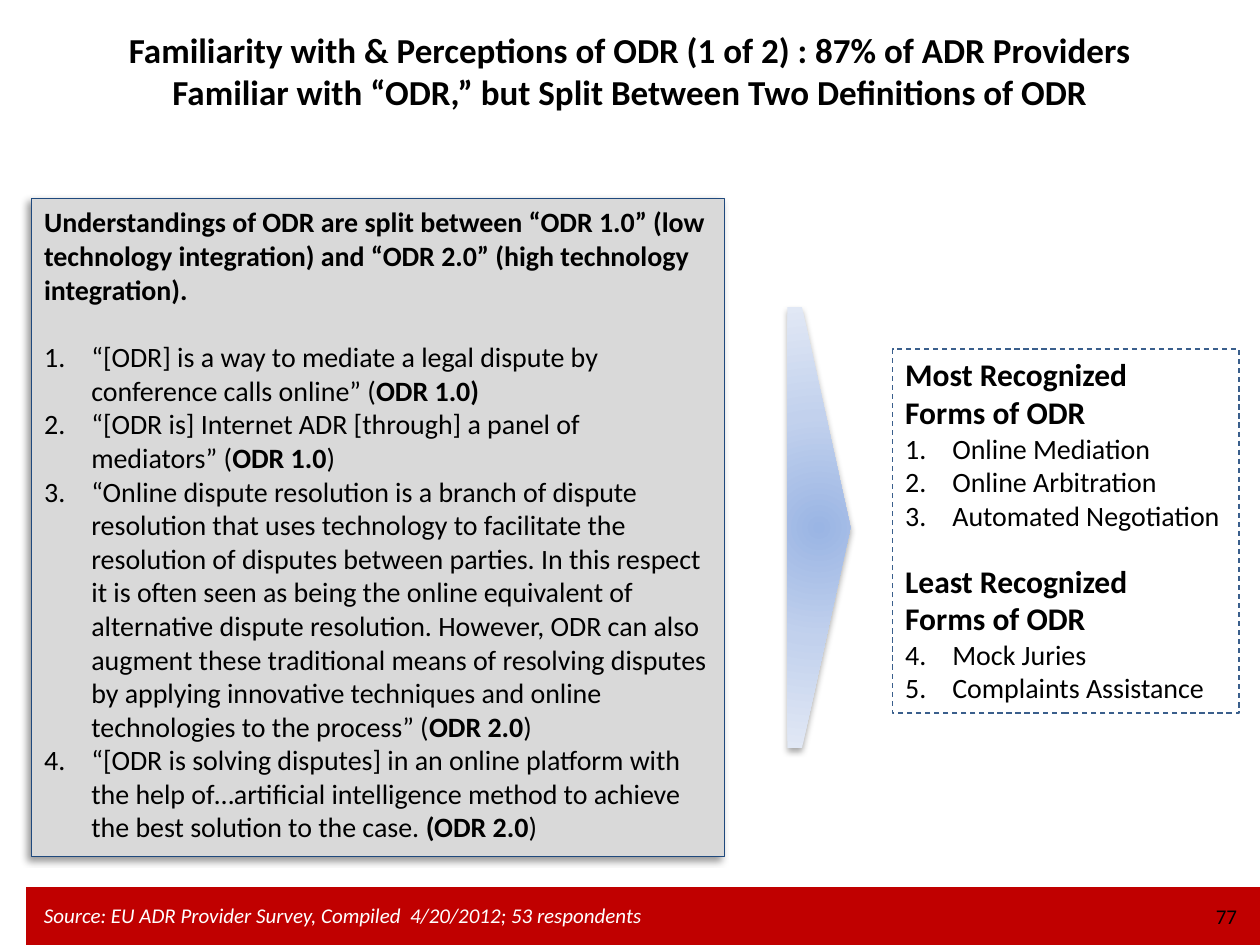
from lxml.etree import SubElement as Sub
from pptx import Presentation
from pptx.dml.color import RGBColor
from pptx.enum.dml import MSO_LINE as Dash
from pptx.enum.shapes import MSO_SHAPE as Kind
from pptx.enum.text import MSO_ANCHOR as Anchor, MSO_AUTO_SIZE as Fit, PP_ALIGN as Align
from pptx.oxml.ns import qn
from pptx.util import Pt

BLACK = RGBColor(0x00, 0x00, 0x00)
WHITE = RGBColor(0xFF, 0xFF, 0xFF)
RED = RGBColor(0xC0, 0x00, 0x00)
GREY = RGBColor(0xD9, 0xD9, 0xD9)
NAVY = RGBColor(0x1F, 0x49, 0x7D)
STEEL = RGBColor(0x3A, 0x5F, 0x8C)
GLOW = [(0, RGBColor(0x9A, 0xB5, 0xE4)),
        (50, RGBColor(0xC2, 0xD1, 0xED)),
        (100, RGBColor(0xE1, 0xE8, 0xF5))]
FONT = "Calibri"
INDENT = 27

TITLE = ("Familiarity with & Perceptions of ODR (1 of 2) : 87% of ADR Providers "
         "Familiar with “ODR,” but Split Between Two Definitions of ODR")
LEAD = ("Understandings of ODR are split between “ODR 1.0” (low technology "
        "integration) and “ODR 2.0” (high technology integration).")
# A bar switches bold on and off
QUOTES = [
    "“[ODR] is a way to mediate a legal dispute by conference calls online” (|ODR 1.0)",
    "“[ODR is] Internet ADR [through] a panel of mediators” (|ODR 1.0|)",
    "“Online dispute resolution is a branch of dispute resolution that uses "
    "technology to facilitate the resolution of disputes between parties. In this "
    "respect it is often seen as being the online equivalent of alternative dispute "
    "resolution. However, ODR can also augment these traditional means of resolving "
    "disputes by applying innovative techniques and online technologies to the "
    "process” (|ODR 2.0|)",
    "“[ODR is solving disputes] in an online platform with the help of…artificial "
    "intelligence method to achieve the best solution to the case. |(ODR 2.0|)",
]
FORMS = [("Most", 1, ["Online Mediation", "Online Arbitration", "Automated Negotiation"]),
         ("Least", 4, ["Mock Juries", "Complaints Assistance"])]


def place(shape, left, top, width, height):
    shape.left, shape.top = Pt(left), Pt(top)
    shape.width, shape.height = Pt(width), Pt(height)
    return shape


def add_run(para, text, size, bold=False, color=BLACK, italic=False):
    run = para.add_run()
    run.text = text
    font = run.font
    font.name, font.size, font.bold, font.italic = FONT, Pt(size), bold, italic
    font.color.rgb = color


def next_para(frame, gap=0):
    """Take the first empty paragraph, or add one, without a bullet yet."""
    first = frame.paragraphs[0]
    para = frame.add_paragraph() if first.runs else first
    para.space_before = Pt(gap)
    return para


def add_head(frame, text, size, gap=0):
    para = next_para(frame, gap)
    props = para._p.get_or_add_pPr()
    props.set("marL", "0")
    props.set("indent", "0")
    Sub(props, qn("a:buNone"))
    add_run(para, text, size, bold=True)


def add_items(frame, items, start=1, gap=0):
    for i, item in enumerate(items):
        para = next_para(frame, 0 if i else gap)
        props = para._p.get_or_add_pPr()
        props.set("marL", str(Pt(INDENT)))
        props.set("indent", str(-Pt(INDENT)))
        Sub(props, qn("a:buFont"), typeface="+mj-lt")
        mark = Sub(props, qn("a:buAutoNum"), type="arabicPeriod")
        if start > 1:
            mark.set("startAt", str(start))
        for j, part in enumerate(item.split("|")):
            add_run(para, part, 16, bold=j % 2 == 1)


def add_shadow(shape, alpha, blur, dist, angle):
    effects = Sub(shape._element.spPr, qn("a:effectLst"))
    outer = Sub(effects, qn("a:outerShdw"), blurRad=str(Pt(blur)), dist=str(Pt(dist)),
                dir=str(angle * 60000), algn="ctr", rotWithShape="0")
    tint = Sub(outer, qn("a:srgbClr"), val=str(BLACK))
    Sub(tint, qn("a:alpha"), val=str(alpha * 1000))


def fill_glow(shape):
    """Fill from the centre outwards."""
    shape.fill.gradient()
    grad = shape._element.spPr.find(qn("a:gradFill"))
    for child in list(grad):
        grad.remove(child)
    stops = Sub(grad, qn("a:gsLst"))
    for pos, color in GLOW:
        stop = Sub(stops, qn("a:gs"), pos=str(pos * 1000))
        Sub(stop, qn("a:srgbClr"), val=str(color))
    ring = Sub(grad, qn("a:path"), path="circle")
    Sub(ring, qn("a:fillToRect"), l="50000", t="50000", r="50000", b="50000")


def add_panel(holder, box, color):
    place(holder, *box)
    holder.line.color.rgb = color
    holder.line.width = Pt(0.75)
    frame = holder.text_frame
    frame.auto_size = Fit.NONE
    frame.vertical_anchor = Anchor.TOP
    return frame


def add_label(slide, box, text, color, align=Align.LEFT, italic=False):
    frame = place(slide.shapes.add_textbox(0, 0, 0, 0), *box).text_frame
    frame.word_wrap = True
    frame.vertical_anchor = Anchor.MIDDLE
    para = frame.paragraphs[0]
    para.alignment = align
    add_run(para, text, 12, color=color, italic=italic)


def add_shape(slide, kind, box):
    shape = place(slide.shapes.add_shape(kind, 0, 0, 0, 0), *box)
    shape.line.fill.background()
    return shape


def main():
    deck = Presentation()
    deck.slide_width, deck.slide_height = Pt(720), Pt(540)
    slide = deck.slides.add_slide(deck.slide_layouts[3])
    title, left, right = slide.placeholders

    # Title
    place(title, 48, 12, 624, 56)
    title.text_frame.auto_size = Fit.NONE
    para = title.text_frame.paragraphs[0]
    para.alignment = Align.CENTER
    add_run(para, TITLE, 20, bold=True)

    # Quotes on the left
    frame = add_panel(left, (18, 113.5, 396, 376), NAVY)
    left.fill.solid()
    left.fill.fore_color.rgb = GREY
    add_shadow(left, 40, 4, 3, 135)
    add_head(frame, LEAD, 16)
    add_items(frame, QUOTES, gap=19.5)

    # Ranked forms on the right
    frame = add_panel(right, (510, 199.5, 198, 208), STEEL)
    right.line.dash_style = Dash.DASH
    for rank, start, items in FORMS:
        add_head(frame, f"{rank} Recognized", 18, gap=17 if start > 1 else 0)
        add_head(frame, "Forms of ODR", 18)
        add_items(frame, items, start)

    # Pointer between the panels
    arrow = add_shape(slide, Kind.PENTAGON, (450, 175.5, 36, 252))
    arrow.adjustments[0] = 0.77
    fill_glow(arrow)
    add_shadow(arrow, 32, 3.5, 2.2, 90)

    # Footer
    bar = add_shape(slide, Kind.RECTANGLE, (15, 507, 705, 33))
    bar.shadow.inherit = False
    bar.fill.solid()
    bar.fill.fore_color.rgb = RED
    add_label(slide, (18, 512, 648, 22),
              "Source: EU ADR Provider Survey, Compiled  4/20/2012; 53 respondents",
              WHITE, italic=True)
    add_label(slide, (672, 509, 42, 29), "77", BLACK, Align.RIGHT)

    deck.save("out.pptx")


if __name__ == "__main__":
    main()
